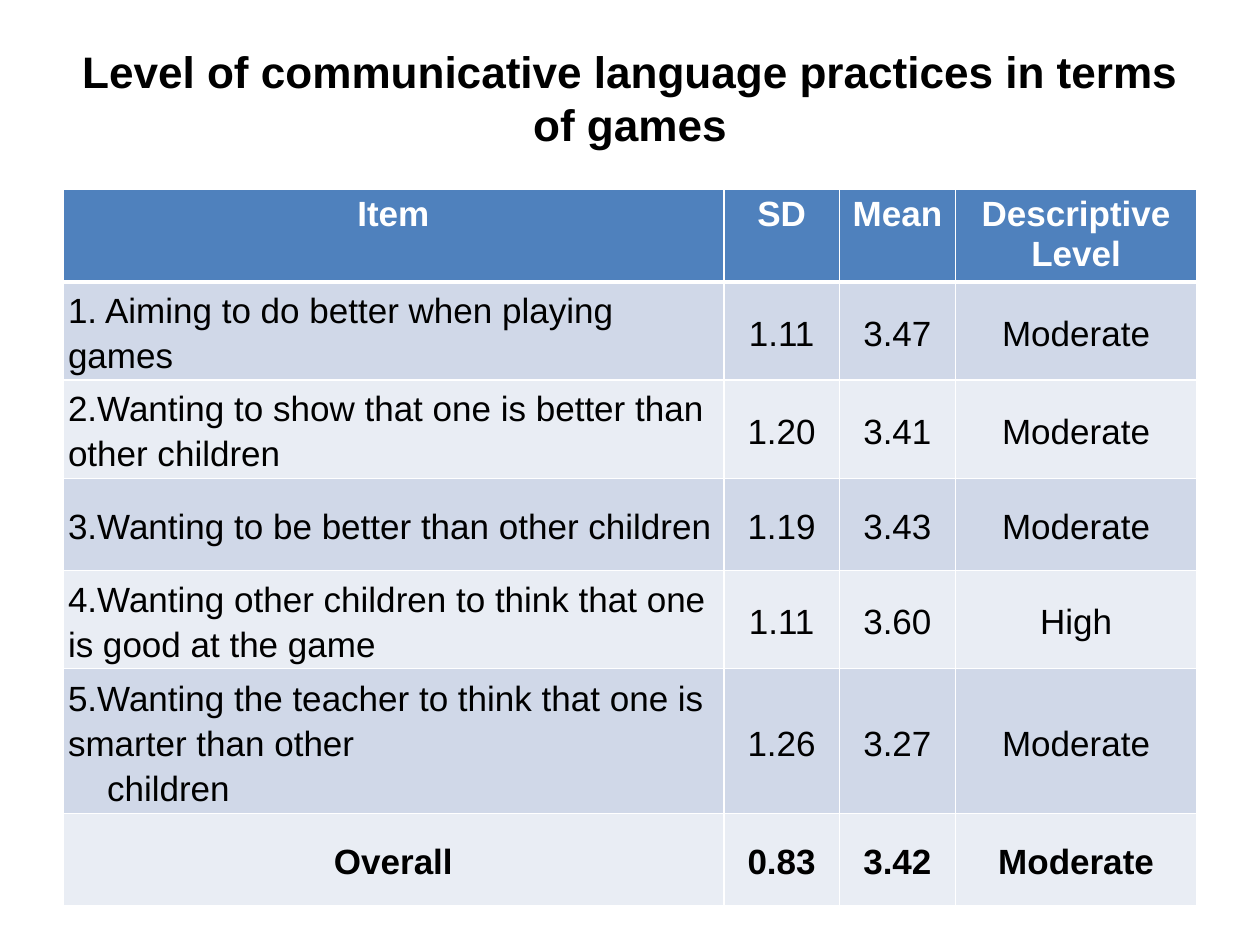
import pptx
import pptx.util
import pptx.dml.color
import pptx.enum.text
import pptx.oxml.ns
import lxml.etree

Inches = pptx.util.Inches
Pt = pptx.util.Pt
ALIGN = pptx.enum.text.PP_ALIGN
ANCHOR = pptx.enum.text.MSO_ANCHOR

WHITE, BLACK = "FFFFFF", "000000"
HEAD, BANDS = "4F81BD", ("D0D8E8", "E9EDF4")
COLS = (5.25, 0.92, 0.92, 1.92)
ROWS = (0.73, 0.78, 0.78, 0.73, 0.78, 1.14, 0.73)
DATA = (
    ("Item", "SD", "Mean", "Descriptive Level"),
    ("1. Aiming to do better when playing games", "1.11", "3.47", "Moderate"),
    ("2.Wanting to show that one is better than other children",
     "1.20", "3.41", "Moderate"),
    ("3.Wanting to be better than other children", "1.19", "3.43", "Moderate"),
    ("4.Wanting other children to think that one is good at the game",
     "1.11", "3.60", "High"),
    ("5.Wanting the teacher to think that one is smarter than other\nchildren",
     "1.26", "3.27", "Moderate"),
    ("Overall", "0.83", "3.42", "Moderate"),
)


def color(code):
    return pptx.dml.color.RGBColor.from_string(code)


def add_run(para, text, size, code, bold):
    run = para.add_run()
    run.text = text
    font = run.font
    font.name, font.size, font.bold = "Arial", Pt(size), bold
    font.color.rgb = color(code)


def set_edges(cell, base):
    """White cell borders; base is the bottom width in points."""
    props = cell._tc.get_or_add_tcPr()
    edges = (("lnL", 1), ("lnR", 1), ("lnT", 1), ("lnB", base))
    for spot, (side, width) in enumerate(edges):
        line = lxml.etree.Element(pptx.oxml.ns.qn("a:" + side), w=str(Pt(width)))
        fill = lxml.etree.SubElement(line, pptx.oxml.ns.qn("a:solidFill"))
        lxml.etree.SubElement(fill, pptx.oxml.ns.qn("a:srgbClr"), val=WHITE)
        props.insert(spot, line)


def add_title(slide, left, top, width, height):
    frame = slide.shapes.add_textbox(left, top, width, height).text_frame
    frame.word_wrap = True
    frame.vertical_anchor = ANCHOR.MIDDLE
    para = frame.paragraphs[0]
    para.alignment = ALIGN.CENTER
    add_run(para, "Level of communicative language practices in terms of games",
            25.2, BLACK, True)


def fill_cell(cell, text, row, col):
    head, last = row == 0, row == len(DATA) - 1
    cell.fill.solid()
    cell.fill.fore_color.rgb = color(HEAD if head else BANDS[(row - 1) % 2])
    set_edges(cell, 3 if head else 1)
    if head:
        cell.margin_bottom = Inches(0.02)
    else:
        cell.vertical_anchor = ANCHOR.MIDDLE
        cell.margin_left = cell.margin_right = Inches(0.04)
        cell.margin_top = cell.margin_bottom = 0
    frame = cell.text_frame
    for spot, part in enumerate(text.split("\n")):
        para = frame.add_paragraph() if spot else frame.paragraphs[0]
        if spot:  # indent the continued line
            para._p.get_or_add_pPr().set("marL", str(Inches(0.31)))
        if not head:
            para.line_spacing = 1.15
        centred = head or last or col > 0
        para.alignment = ALIGN.CENTER if centred else ALIGN.LEFT
        add_run(para, part, 20, WHITE if head else BLACK, head or last)


def add_scores(slide, left, top, width, height):
    table = slide.shapes.add_table(
        len(ROWS), len(COLS), left, top, width, height).table
    for col, size in enumerate(COLS):
        table.columns[col].width = int(width * size / sum(COLS))
    for row, size in enumerate(ROWS):
        table.rows[row].height = int(height * size / sum(ROWS))
        for col, text in enumerate(DATA[row]):
            fill_cell(table.cell(row, col), text, row, col)


def main():
    deck = pptx.Presentation()
    deck.slide_width, deck.slide_height = Inches(10), Inches(7.5)
    slide = deck.slides.add_slide(deck.slide_layouts[6])
    # Heading
    add_title(slide, Inches(0.5), Inches(0.3), Inches(9), Inches(0.95))
    # Table of scores
    add_scores(slide, Inches(0.5), Inches(1.5), Inches(9), Inches(5.67))
    deck.save("out.pptx")


if __name__ == "__main__":
    main()
